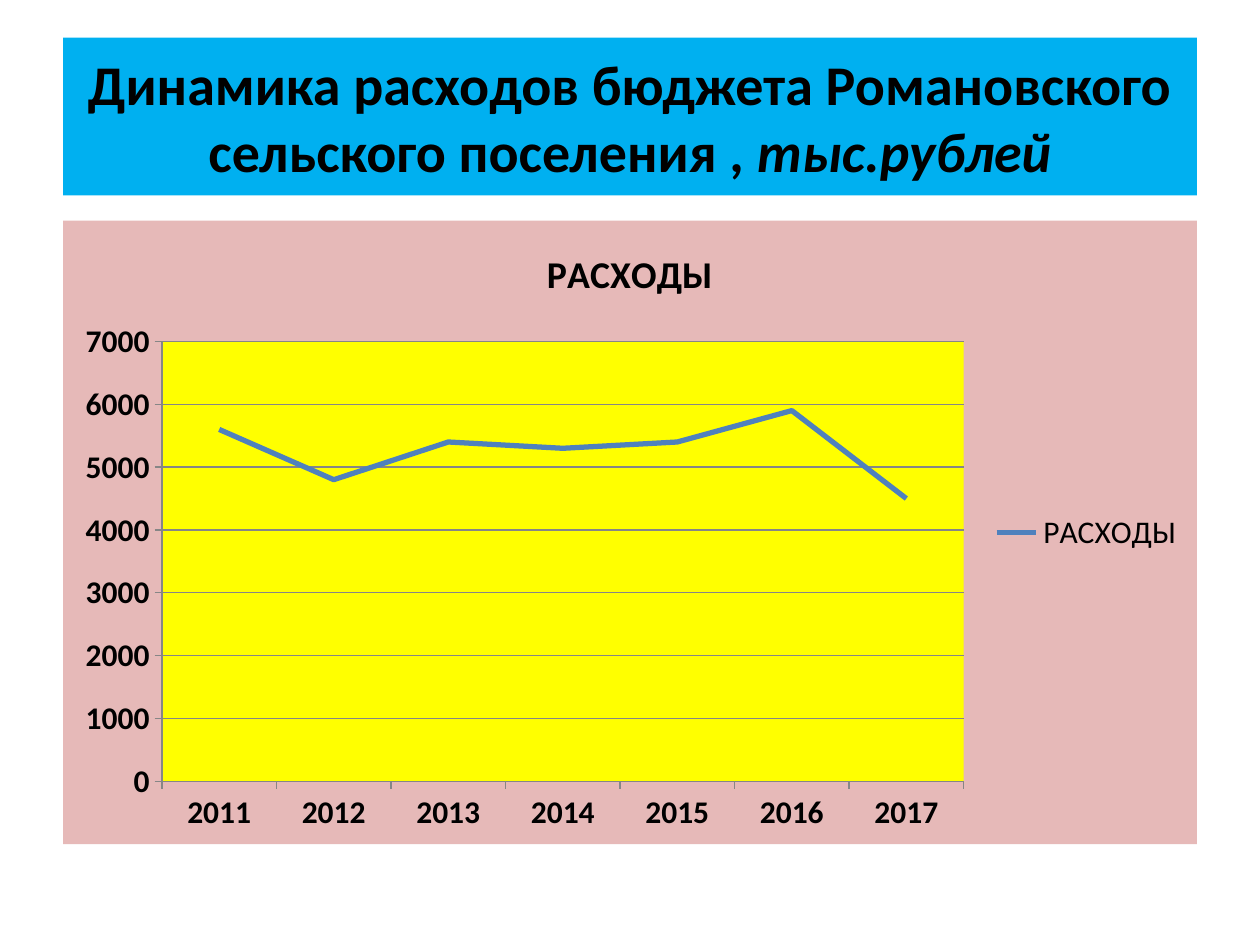
from dataclasses import dataclass

from lxml import etree
from pptx import Presentation
from pptx import util as u
from pptx.chart.data import CategoryChartData
from pptx.dml.color import RGBColor
from pptx.enum import chart as ch, text
from pptx.oxml import ns


@dataclass(frozen=True)
class Theme:
    font: str = "Calibri"
    ink: str = "000000"
    banner: str = "00B0F0"
    panel: str = "E6B9B8"
    plot: str = "FFFF00"
    line: str = "4F81BD"
    axis: str = "868686"
    title_size: float = 32
    chart_title_size: float = 21.6
    chart_size: float = 18


THEME = Theme()
LEFT, WIDTH = u.Cm(1.27), u.Cm(22.86)
YEARS = [str(year) for year in range(2011, 2018)]
EXPENSES = [5600, 4800, 5400, 5300, 5400, 5900, 4500]


def set_font(font, size, bold):
    font.name = THEME.font
    font.size = u.Pt(size)
    font.bold = bold
    font.color.rgb = RGBColor.from_string(THEME.ink)


def set_line(line, color, width):
    line.color.rgb = RGBColor.from_string(color)
    line.width = u.Pt(width)


def area_fill(color):
    sp_pr = etree.Element(ns.qn("c:spPr"))
    fill = etree.SubElement(sp_pr, ns.qn("a:solidFill"))
    etree.SubElement(fill, ns.qn("a:srgbClr"), val=color)
    line = etree.SubElement(sp_pr, ns.qn("a:ln"))
    etree.SubElement(line, ns.qn("a:noFill"))
    return sp_pr


def add_title(s):
    sp = s.shapes.title
    sp.left, sp.top, sp.width, sp.height = LEFT, u.Cm(0.76), WIDTH, u.Cm(3.18)
    sp.fill.solid()
    sp.fill.fore_color.rgb = RGBColor.from_string(THEME.banner)
    tf = sp.text_frame
    tf.word_wrap = True
    tf.vertical_anchor = text.MSO_ANCHOR.MIDDLE
    p = tf.paragraphs[0]
    p.alignment = text.PP_ALIGN.CENTER
    set_font(p.font, THEME.title_size, True)
    p.add_run().text = "Динамика расходов бюджета Романовского сельского поселения , "
    r = p.add_run()
    r.text = "тыс.рублей"
    r.font.italic = True


def style_axis(axis):
    axis.major_tick_mark = ch.XL_TICK_MARK.OUTSIDE
    axis.minor_tick_mark = ch.XL_TICK_MARK.NONE
    set_font(axis.tick_labels.font, THEME.chart_size, True)
    set_line(axis.format.line, THEME.axis, 0.75)


def add_expense_chart(s):
    data = CategoryChartData()
    data.categories = YEARS
    data.add_series("РАСХОДЫ", EXPENSES)
    chart = s.shapes.add_chart(
        ch.XL_CHART_TYPE.LINE_STACKED, LEFT, u.Cm(4.45), WIDTH, u.Cm(12.57), data
    ).chart
    set_font(chart.font, THEME.chart_size, False)

    chart.has_title = True
    p = chart.chart_title.text_frame.paragraphs[0]
    p.add_run().text = "РАСХОДЫ"
    set_font(p.font, THEME.chart_title_size, True)
    chart.chart_title.include_in_layout = False

    chart.has_legend = True
    chart.legend.position = ch.XL_LEGEND_POSITION.RIGHT
    chart.legend.include_in_layout = False

    for axis in (chart.category_axis, chart.value_axis):
        style_axis(axis)
    chart.value_axis.minimum_scale = 0
    chart.value_axis.maximum_scale = 7000
    chart.value_axis.major_unit = 1000
    chart.value_axis.has_major_gridlines = True
    set_line(chart.value_axis.major_gridlines.format.line, THEME.axis, 0.75)

    chart.plots[0].vary_by_categories = False
    series = chart.plots[0].series[0]
    series.smooth = False
    series.marker.style = ch.XL_MARKER_STYLE.NONE
    set_line(series.format.line, THEME.line, 3)

    frame = chart.element.find(ns.qn("c:chart"))
    frame.addnext(area_fill(THEME.panel))
    frame.find(ns.qn("c:plotArea")).append(area_fill(THEME.plot))


def main():
    prs = Presentation()
    prs.slide_width, prs.slide_height = u.Cm(25.4), u.Cm(19.05)
    s = prs.slides.add_slide(prs.slide_layouts[5])
    add_title(s)
    add_expense_chart(s)
    prs.save("out.pptx")


if __name__ == "__main__":
    main()
